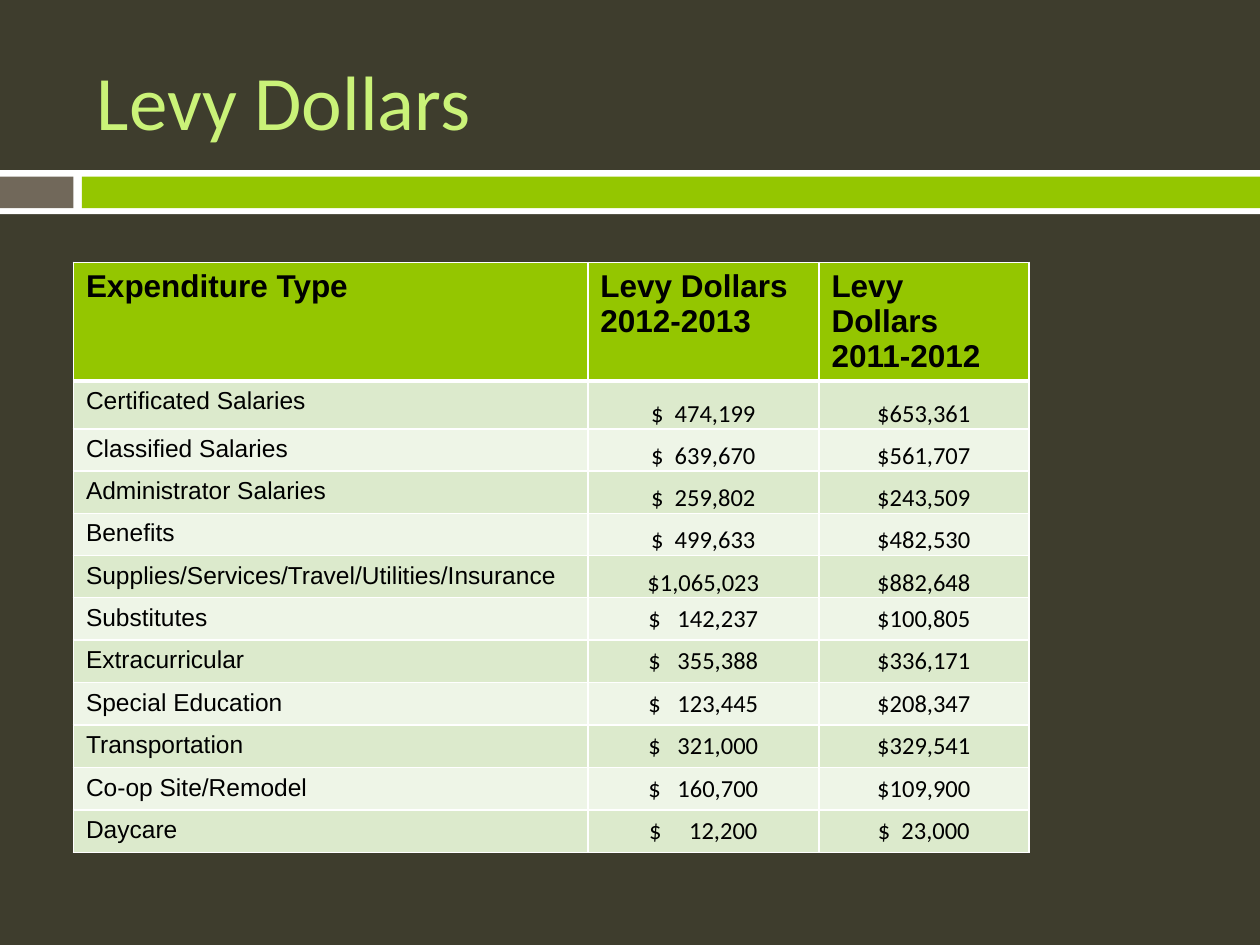
from lxml import etree
from pptx import Presentation
from pptx.dml.color import RGBColor
from pptx.enum.shapes import MSO_SHAPE
from pptx.enum.text import MSO_ANCHOR, PP_ALIGN
from pptx.oxml.ns import qn
from pptx.util import Cm, Pt

RECTANGLE = MSO_SHAPE.RECTANGLE
TOP, MIDDLE, BOTTOM = MSO_ANCHOR.TOP, MSO_ANCHOR.MIDDLE, MSO_ANCHOR.BOTTOM
LEFT, CENTER = PP_ALIGN.LEFT, PP_ALIGN.CENTER

BACKGROUND, WHITE, BLACK = "3E3D2D", "FFFFFF", "000000"
GREEN, TAUPE, TITLE_GREEN = "94C600", "71685A", "CAF278"
ROW_FILLS = ("DCEACC", "EEF5E7")

HEADINGS = (
    ("Expenditure Type",),
    ("Levy Dollars", "2012-2013"),
    ("Levy Dollars", "2011-2012"),
)
EXPENDITURES = (
    ("Certificated Salaries", "$  474,199", "$653,361"),
    ("Classified Salaries", "$  639,670", "$561,707"),
    ("Administrator Salaries", "$  259,802", "$243,509"),
    ("Benefits", "$  499,633", "$482,530"),
    ("Supplies/Services/Travel/Utilities/Insurance", "$1,065,023", "$882,648"),
    ("Substitutes", "$   142,237", "$100,805"),
    ("Extracurricular", "$   355,388", "$336,171"),
    ("Special Education", "$   123,445", "$208,347"),
    ("Transportation", "$   321,000", "$329,541"),
    ("Co-op Site/Remodel", "$   160,700", "$109,900"),
    ("Daycare", "$     12,200", "$  23,000"),
)
BOTTOM_ALIGNED_ROWS = 5  # the first amounts sit on the cell's lower edge
COLUMN_WIDTHS = (10.37, 4.66, 4.23)
ROW_HEIGHTS = (2.37, 0.97) + (0.85,) * (len(EXPENDITURES) - 1)


def color(hex_code):
    return RGBColor.from_string(hex_code)


def add_run(paragraph, text, size, font, hex_code, bold=False):
    run = paragraph.add_run()
    run.text = text
    run.font.size = Pt(size)
    run.font.name = font
    run.font.bold = bold
    run.font.color.rgb = color(hex_code)


def add_band(slide, left, top, width, height, fill):
    band = slide.shapes.add_shape(
        RECTANGLE, Cm(left), Cm(top), Cm(width), Cm(height))
    band.shadow.inherit = False
    band.fill.solid()
    band.fill.fore_color.rgb = color(fill)
    band.line.fill.background()


def set_title(slide, text):
    title = slide.shapes.title
    title.left, title.top = Cm(1.7), Cm(0.64)
    title.width, title.height = Cm(22.66), Cm(2.74)
    title.text_frame.vertical_anchor = MIDDLE
    paragraph = title.text_frame.paragraphs[0]
    paragraph.alignment = LEFT
    add_run(paragraph, text, 44, "Calibri", TITLE_GREEN)


def set_borders(cell, top=1, bottom=1):
    properties = cell._tc.get_or_add_tcPr()
    widths = {"a:lnL": 1, "a:lnR": 1, "a:lnT": top, "a:lnB": bottom}
    for side, width in widths.items():
        line = etree.SubElement(properties, qn(side), w=str(Pt(width)))
        fill = etree.SubElement(line, qn("a:solidFill"))
        etree.SubElement(fill, qn("a:srgbClr"), val=WHITE)


def fill_cell(cell, lines, fill, size, font, bold=False, alignment=LEFT):
    cell.fill.solid()
    cell.fill.fore_color.rgb = color(fill)
    cell.vertical_anchor = TOP
    frame = cell.text_frame
    for index, line in enumerate(lines):
        paragraph = frame.add_paragraph() if index else frame.paragraphs[0]
        paragraph.alignment = alignment
        add_run(paragraph, line, size, font, BLACK, bold)


def drop_to_bottom(cell):
    cell.vertical_anchor = BOTTOM
    cell.margin_left = cell.margin_right = cell.margin_top = Cm(0.03)
    cell.margin_bottom = 0


def add_levy_table(slide):
    table = slide.shapes.add_table(
        len(ROW_HEIGHTS), len(COLUMN_WIDTHS), Cm(1.48), Cm(5.29),
        Cm(sum(COLUMN_WIDTHS)), Cm(sum(ROW_HEIGHTS))).table
    for column, width in zip(table.columns, COLUMN_WIDTHS):
        column.width = Cm(width)
    for row, height in zip(table.rows, ROW_HEIGHTS):
        row.height = Cm(height)

    # Header row, with a heavier rule below it
    for column, heading in enumerate(HEADINGS):
        cell = table.cell(0, column)
        set_borders(cell, bottom=3)
        fill_cell(cell, heading, GREEN, 18, "Arial", bold=True)

    # Expenditure rows in alternating tints
    for row, values in enumerate(EXPENDITURES, start=1):
        fill = ROW_FILLS[(row - 1) % 2]
        for column, value in enumerate(values):
            cell = table.cell(row, column)
            set_borders(cell, top=3 if row == 1 else 1)
            if column == 0:
                fill_cell(cell, [value], fill, 14, "Arial")
                continue
            fill_cell(cell, [value], fill, 14, "Calibri", alignment=CENTER)
            if row <= BOTTOM_ALIGNED_ROWS:
                drop_to_bottom(cell)


def main():
    presentation = Presentation()
    presentation.slide_width, presentation.slide_height = Cm(25.4), Cm(19.05)
    slide = presentation.slides.add_slide(presentation.slide_layouts[5])
    slide.background.fill.solid()
    slide.background.fill.fore_color.rgb = color(BACKGROUND)

    # Divider: white strip with a taupe and a green bar
    add_band(slide, 0, 3.43, 25.4, 0.89, WHITE)
    add_band(slide, 0, 3.56, 1.48, 0.64, TAUPE)
    add_band(slide, 1.65, 3.56, 23.75, 0.64, GREEN)

    set_title(slide, "Levy Dollars")
    add_levy_table(slide)
    presentation.save("out.pptx")


if __name__ == "__main__":
    main()
